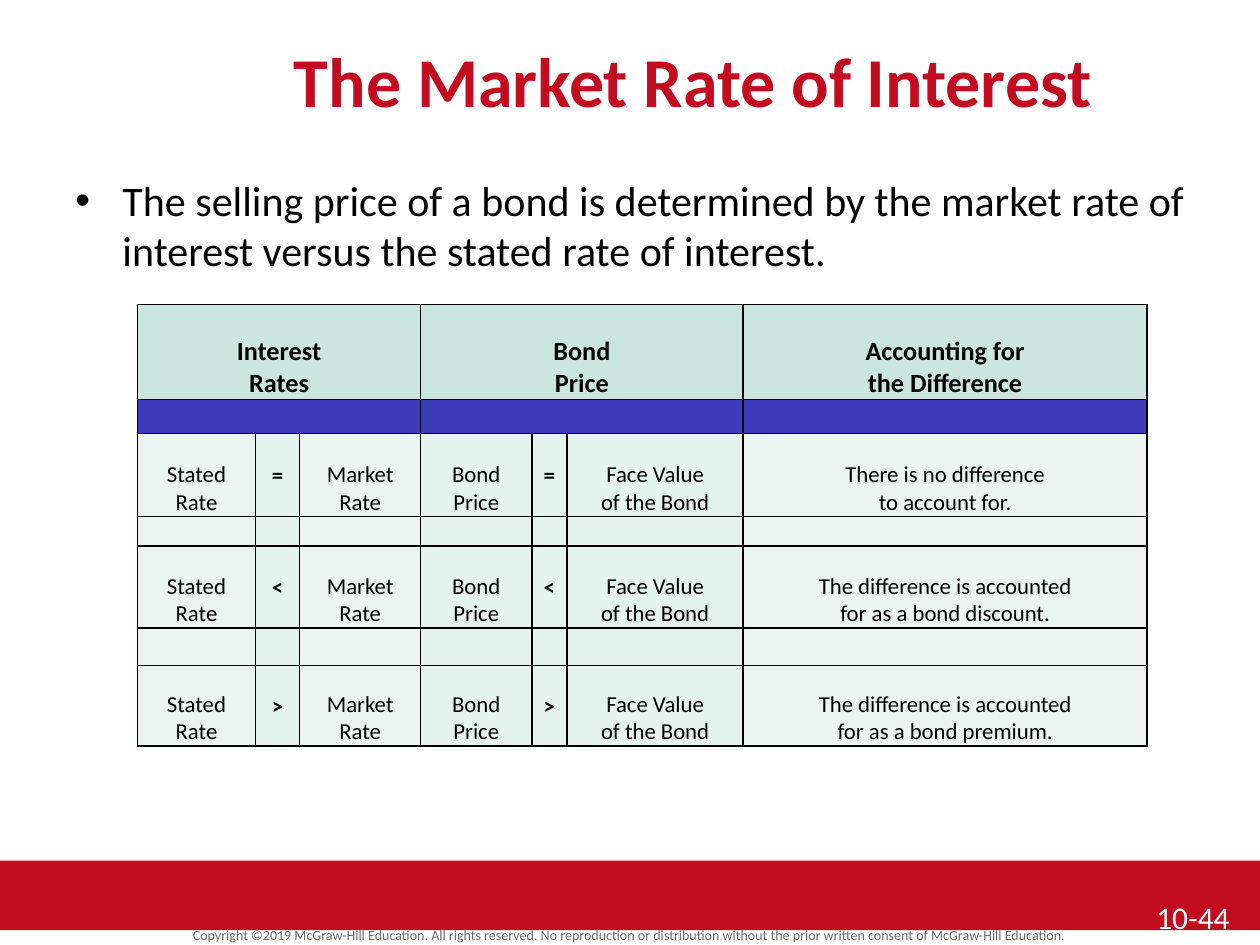
from lxml.etree import SubElement
from pptx import Presentation
from pptx.dml.color import RGBColor as RGB
from pptx.enum.shapes import MSO_SHAPE as Shape
from pptx.enum.text import MSO_ANCHOR as Anchor, PP_ALIGN as Align
from pptx.oxml import parse_xml
from pptx.oxml.ns import nsdecls, qn
from pptx.util import Cm, Pt


class Theme:
    font = "Calibri"
    red, grey, white, black = "C30C20", "6A6A6A", "FFFFFF", "000000"
    header, divider, pale, mint = "CAE6DE", "3C3CBA", "ECF4F1", "E4F3EE"
    title_size, body_size, number_size, copyright_size = 40, 24, 18, 8
    header_size, cell_size, gap_size = 15, 13, 8


def style(frame, size, color, bold=False, align=Align.LEFT):
    for paragraph in frame.paragraphs:
        paragraph.alignment = align
        for run in paragraph.runs:
            run.font.name = Theme.font
            run.font.size = Pt(size)
            run.font.bold = bold
            run.font.color.rgb = RGB.from_string(color)


def add_text(box, text, size, color, bold=False, align=Align.LEFT):
    frame = slide.shapes.add_textbox(*map(Cm, box)).text_frame
    frame.word_wrap = True
    frame.text = text
    style(frame, size, color, bold, align)
    return frame


deck = Presentation()
deck.slide_width, deck.slide_height = Cm(25.4), Cm(19.05)
slide = deck.slides.add_slide(deck.slide_layouts[6])

# Footer band and copyright line
band = slide.shapes.add_shape(Shape.RECTANGLE, 0, Cm(17.35), Cm(25.4), Cm(1.4))
band.shadow.inherit = False
band.fill.solid()
band.fill.fore_color.rgb = RGB.from_string(Theme.red)
band.line.fill.background()
copyright_line = add_text(
    (0, 18.64, 25.4, 0.48),
    "Copyright ©2019 McGraw-Hill Education. All rights reserved. No reproduction or "
    "distribution without the prior written consent of McGraw-Hill Education.",
    Theme.copyright_size, Theme.grey, align=Align.CENTER)
copyright_line.vertical_anchor = Anchor.MIDDLE
copyright_line.paragraphs[0].line_spacing = 0.8

# Title
add_text((2.54, 0.64, 22.86, 1.7), "The Market Rate of Interest",
         Theme.title_size, Theme.red, True, Align.CENTER)

# Bulleted statement
statement = add_text(
    (1.27, 3.39, 22.86, 13.13),
    "The selling price of a bond is determined by the market rate of interest "
    "versus the stated rate of interest.",
    Theme.body_size, Theme.black).paragraphs[0]
statement.space_after = Pt(8)
bullet_props = statement._p.get_or_add_pPr()
bullet_props.set("marL", str(Cm(0.95)))
bullet_props.set("indent", str(-Cm(0.95)))
SubElement(bullet_props, qn("a:buFont"), typeface="Arial")
SubElement(bullet_props, qn("a:buChar"), char="•")

# Page number
add_text((23.06, 17.98, 2.34, 1.07), "10-44", Theme.number_size, Theme.white)

# Table content: each comparison sign applies to both rates and prices
headings = ["Interest\nRates", "", "", "Bond\nPrice", "", "",
            "Accounting for\nthe Difference"]
outcomes = [("=", "There is no difference\nto account for."),
            ("<", "The difference is accounted\nfor as a bond discount."),
            (">", "The difference is accounted\nfor as a bond premium.")]
blank_row = [""] * 7
rows = [headings]
for sign, outcome in outcomes:
    rows += [blank_row, ["Stated\nRate", sign, "Market\nRate", "Bond\nPrice", sign,
                         "Face Value\nof the Bond", outcome]]
column_widths = [2.38, 0.89, 2.44, 2.24, 0.71, 3.55, 8.14]
row_heights = [1.91, 0.69, 1.67, 0.6, 1.65, 0.76, 1.62]
column_fills = [Theme.pale, Theme.mint, Theme.pale, Theme.mint, Theme.mint,
                Theme.mint, Theme.pale]
row_fills = {0: Theme.header, 1: Theme.divider}

# Table grid
comparison = slide.shapes.add_table(
    len(rows), len(column_widths), Cm(2.77), Cm(6.14),
    Cm(sum(column_widths)), Cm(sum(row_heights))).table
comparison.first_row = comparison.horz_banding = False
for column, width in zip(comparison.columns, column_widths):
    column.width = Cm(width)
for row, height in zip(comparison.rows, row_heights):
    row.height = Cm(height)
for r in (0, 1):
    for first in (0, 3):
        comparison.cell(r, first).merge(comparison.cell(r, first + 2))

# Table cells
for r, texts in enumerate(rows):
    for c, text in enumerate(texts):
        cell = comparison.cell(r, c)
        is_sign = text in ("=", "<", ">")
        cell.margin_left = cell.margin_right = cell.margin_top = Cm(0.03)
        cell.margin_bottom = 0
        cell.vertical_anchor = Anchor.MIDDLE if is_sign else Anchor.BOTTOM
        if text:
            cell.text_frame.text = text
            style(cell.text_frame, Theme.cell_size if r else Theme.header_size,
                  Theme.black, r == 0 or is_sign, Align.CENTER)
        else:
            SubElement(cell.text_frame.paragraphs[0]._p, qn("a:endParaRPr"),
                       sz=str(Theme.gap_size * 100))
        cell_props = cell._tc.get_or_add_tcPr()
        for side in "LRTB":
            cell_props.append(parse_xml(
                f'<a:ln{side} {nsdecls("a")} w="{Pt(1)}"><a:solidFill>'
                f'<a:srgbClr val="{Theme.black}"/></a:solidFill></a:ln{side}>'))
        cell.fill.solid()
        cell.fill.fore_color.rgb = RGB.from_string(row_fills.get(r, column_fills[c]))

deck.save("out.pptx")
